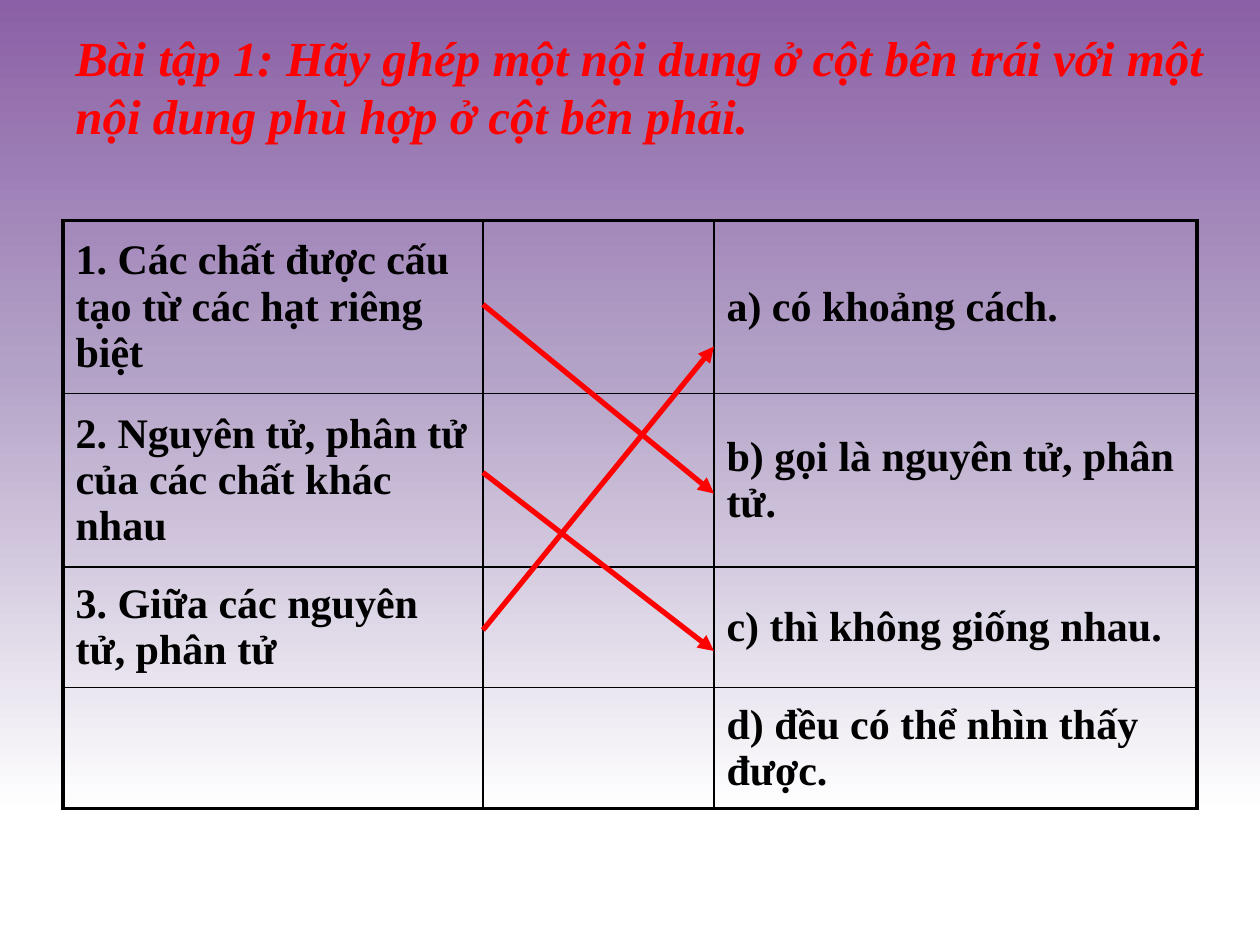
import copy
from dataclasses import dataclass

import pptx
import pptx.dml.color
import pptx.enum.shapes
import pptx.enum.text
import pptx.oxml.ns
import pptx.util
from lxml import etree


@dataclass(frozen=True)
class Theme:
    font: str = "Times New Roman"
    ink: str = "000000"
    accent: str = "FF0000"
    sky: tuple = ((0, "8B60A6"), (0.39, "B3A2C7"), (0.86, "FFFFFF"))
    head: int = 28
    body: int = 24
    arrow: float = 3
    frame: float = 2.25
    rule: float = 1


def tint(code):
    return pptx.dml.color.RGBColor.from_string(code)


def add(parent, tag, **attrs):
    node = etree.SubElement(parent, pptx.oxml.ns.qn(tag))
    for key, value in attrs.items():
        node.set(key, str(value))
    return node


class Deck:
    """Holds the style and the slide; lengths are grid steps, 120 by 90."""

    def __init__(self, theme):
        self.theme = theme
        self.prs = pptx.Presentation()
        self.prs.slide_width = pptx.util.Inches(10)
        self.prs.slide_height = pptx.util.Inches(7.5)
        self.step = self.prs.slide_width / 120
        self.slide = self.prs.slides.add_slide(self.prs.slide_layouts[6])

    def grid(self, *steps):
        return [pptx.util.Emu(round(n * self.step)) for n in steps]

    def back(self):
        fill = self.slide.background.fill
        fill.gradient()
        fill.gradient_angle = 270
        stops = self.slide.element.xpath(".//a:gsLst")[0]
        stops.append(copy.deepcopy(stops[-1]))
        for stop, (place, code) in zip(fill.gradient_stops, self.theme.sky):
            stop.position = place
            stop.color.rgb = tint(code)

    def text(self, frame, words, size, color, gap, italic=None):
        para = frame.paragraphs[0]
        # Space before, as a percentage of the line
        space = add(para._p.get_or_add_pPr(), "a:spcBef")
        add(space, "a:spcPct", val=gap * 1000)
        run = para.add_run()
        run.text = words
        font = run.font
        font.name, font.size = self.theme.font, pptx.util.Pt(size)
        font.bold, font.italic = True, italic
        font.color.rgb = tint(color)

    def title(self, words, *box):
        frame = self.slide.shapes.add_textbox(*self.grid(*box)).text_frame
        frame.word_wrap = True
        frame.auto_size = pptx.enum.text.MSO_AUTO_SIZE.SHAPE_TO_FIT_TEXT
        self.text(frame, words, self.theme.head, self.theme.accent, 50, True)

    def edge(self, cell, side, outer):
        width = self.theme.frame if outer else self.theme.rule
        line = add(cell._tc.get_or_add_tcPr(), "a:ln" + side,
                   w=int(pptx.util.Pt(width)))
        add(add(line, "a:solidFill"), "a:srgbClr", val=self.theme.ink)

    def table(self, data, left, top, cols, rows):
        box = self.grid(left, top, sum(cols), sum(rows))
        table = self.slide.shapes.add_table(len(rows), len(cols), *box).table
        table.first_row = table.horz_banding = False
        for col, width in zip(table.columns, self.grid(*cols)):
            col.width = width
        for row, height in zip(table.rows, self.grid(*rows)):
            row.height = height
        for r, line in enumerate(data):
            for c, words in enumerate(line):
                cell = table.cell(r, c)
                outer = {"L": c == 0, "R": c == len(cols) - 1,
                         "T": r == 0, "B": r == len(rows) - 1}
                for side, flag in outer.items():
                    self.edge(cell, side, flag)
                cell.fill.background()
                cell.vertical_anchor = pptx.enum.text.MSO_ANCHOR.MIDDLE
                if words:
                    self.text(cell.text_frame, words, self.theme.body,
                              self.theme.ink, 20)

    def arrow(self, *ends):
        kind = pptx.enum.shapes.MSO_CONNECTOR.STRAIGHT
        link = self.slide.shapes.add_connector(kind, *self.grid(*ends))
        link.line.color.rgb = tint(self.theme.accent)
        link.line.width = pptx.util.Pt(self.theme.arrow)
        add(link.line._get_or_add_ln(), "a:tailEnd", type="triangle")
        add(link._element.spPr, "a:effectLst")


def main():
    deck = Deck(Theme())
    deck.back()

    # Matching table: statements, gap for arrows, endings
    cols, left = (40, 22, 46), 6
    deck.table([
        ("1. Các chất được cấu tạo từ các hạt riêng biệt", "",
         "a) có khoảng cách."),
        ("2. Nguyên tử, phân tử của các chất khác nhau", "",
         "b) gọi là nguyên tử, phân tử."),
        ("3. Giữa các nguyên tử, phân tử", "",
         "c) thì không giống nhau."),
        ("", "", "d) đều có thể nhìn thấy được."),
    ], left, 21, cols, (16.5, 16.5, 11.5, 11.5))

    # Task
    deck.title("Bài tập 1: Hãy ghép một nội dung ở cột bên trái với một "
               "nội dung phù hợp ở cột bên phải.", 6, 2, 110, 12.5)

    # Answers: arrows across the middle column
    start = left + cols[0]
    for tail, tip in ((29, 47), (60, 33), (45, 62)):
        deck.arrow(start, tail, start + cols[1], tip)

    deck.prs.save("out.pptx")


if __name__ == "__main__":
    main()
